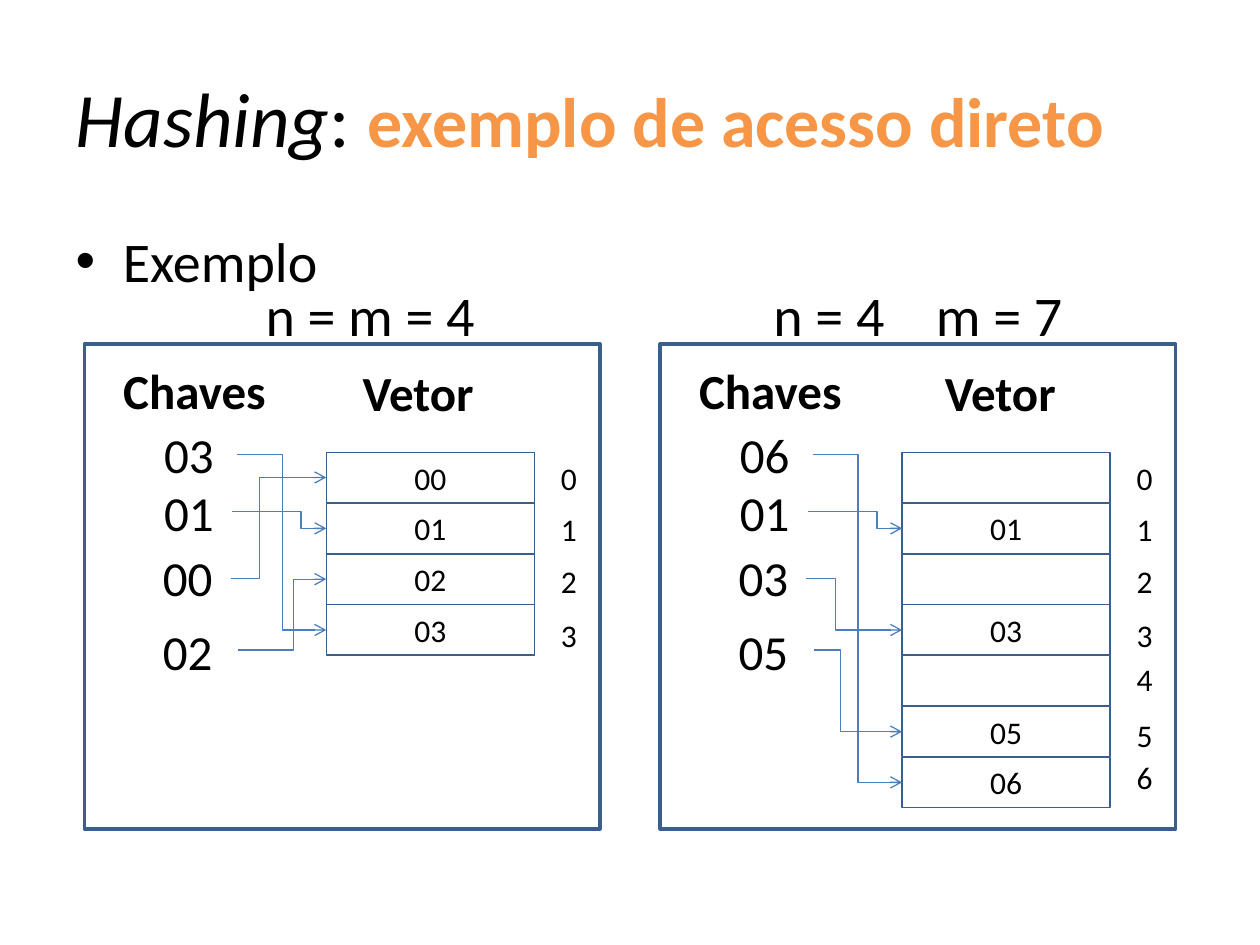
from dataclasses import dataclass

from lxml import etree
from pptx import Presentation
from pptx.dml.color import RGBColor
from pptx.enum.shapes import MSO_CONNECTOR, MSO_SHAPE
from pptx.enum.text import MSO_ANCHOR, PP_ALIGN
from pptx.oxml.ns import qn
from pptx.util import Inches, Pt

ELBOW = MSO_CONNECTOR.ELBOW
RECT = MSO_SHAPE.RECTANGLE
MIDDLE = MSO_ANCHOR.MIDDLE
LEFT, CENTER, JUSTIFY = PP_ALIGN.LEFT, PP_ALIGN.CENTER, PP_ALIGN.JUSTIFY

FONT = "Calibri"
BLACK, ORANGE, BORDER, ARROW = "000000", "F79646", "3A5F8C", "4B7EBC"

FRAME_TOP, FRAME_W, FRAME_H = 2.73, 4.09, 3.85
CELL_X, CELL_TOP, CELL_W, CELL_H = 1.92, 3.59, 1.65, 0.4
CELL_PITCH = (6.01 - CELL_TOP) / 6
INDEX_X, INDEX_TOPS = 3.59, (3.59, 4, 4.41, 4.84, 5.19, 5.63, 5.97)


@dataclass(frozen=True)
class KeySlot:
    """Place of one key and of the start of its arrow; x is from the frame."""
    center: float
    top: float
    arrow_x: float
    arrow_y: float


@dataclass(frozen=True)
class Panel:
    left: float
    caption: str
    caption_x: float
    vector_x: float
    keys: tuple[str, ...]
    bends: tuple[float, ...]
    size: int


SLOTS = (
    KeySlot(0.83, 3.32, 1.21, 3.61),
    KeySlot(0.83, 3.78, 1.17, 4.06),
    KeySlot(0.82, 4.3, 1.16, 4.59),
    KeySlot(0.82, 4.88, 1.22, 5.16),
)
PANELS = (
    Panel(0.67, "n = m = 4", 2.01, 2.78,
          ("03", "01", "00", "02"), (1.57, 1.72, 1.39, 1.66), 4),
    Panel(5.24, "n = 4\tm = 7", 6.04, 7.4,
          ("06", "01", "03", "05"), (1.57, 1.72, 1.39, 1.43), 7),
)


def rgb(color: str) -> RGBColor:
    return RGBColor.from_string(color)


def add_run(p, text: str, size: float, color: str = BLACK,
            bold: bool = False, italic: bool = False) -> None:
    r = p.add_run()
    r.text = text
    f = r.font
    f.name, f.size, f.bold, f.italic = FONT, Pt(size), bold, italic
    f.color.rgb = rgb(color)


def place(sp, x: float, y: float, w: float, h: float) -> None:
    sp.left, sp.top, sp.width, sp.height = map(Inches, (x, y, w, h))


def add_text(s, text: str, x: float, y: float, w: float, h: float,
             size: float, align=CENTER, bold: bool = False):
    tf = s.shapes.add_textbox(*map(Inches, (x, y, w, h))).text_frame
    tf.word_wrap = True
    p = tf.paragraphs[0]
    p.alignment = align
    add_run(p, text, size, bold=bold)
    return p


def add_tab_stop(p, pos: float) -> None:
    tabs = etree.SubElement(p._p.get_or_add_pPr(), qn("a:tabLst"))
    etree.SubElement(tabs, qn("a:tab"), pos=str(Inches(pos)), algn="l")


def add_box(s, x: float, y: float, w: float, h: float, line: float,
            text: str = "") -> None:
    sp = s.shapes.add_shape(RECT, *map(Inches, (x, y, w, h)))
    sp.shadow.inherit = False
    sp.fill.background()
    sp.line.color.rgb = rgb(BORDER)
    sp.line.width = Pt(line)
    if text:
        tf = sp.text_frame
        tf.vertical_anchor = MIDDLE
        tf.paragraphs[0].alignment = CENTER
        add_run(tf.paragraphs[0], text, 18)


def add_arrow(s, x1: float, y1: float, x2: float, y2: float,
              bend_x: float) -> None:
    """Elbow arrow whose upright part stands at bend_x."""
    c = s.shapes.add_connector(ELBOW, *map(Inches, (x1, y1, x2, y2)))
    c.line.color.rgb = rgb(ARROW)
    c.line.width = Pt(0.75)
    sp_pr = c._element.spPr
    etree.SubElement(sp_pr.find(qn("a:ln")), qn("a:tailEnd"), type="arrow")
    etree.SubElement(sp_pr, qn("a:effectLst"))
    adj = round((bend_x - x1) / (x2 - x1) * 100000)
    guides = sp_pr.find(qn("a:prstGeom")).find(qn("a:avLst"))
    etree.SubElement(guides, qn("a:gd"), name="adj1", fmla=f"val {adj}")


def draw_panel(s, panel: Panel) -> None:
    left = panel.left
    add_box(s, left, FRAME_TOP, FRAME_W, FRAME_H, 2)
    caption = add_text(s, panel.caption, panel.caption_x, 2.18, 2.6, 0.64,
                       32, LEFT)
    if "\t" in panel.caption:
        add_tab_stop(caption, 1.29)
    add_text(s, "Chaves", left + 0.21, 2.81, 1.34, 0.57, 28, LEFT, True)
    add_text(s, "Vetor", panel.vector_x, 2.83, 1.34, 0.57, 28, LEFT, True)

    for i in range(panel.size):
        key = f"{i:02}"
        add_box(s, left + CELL_X, CELL_TOP + i * CELL_PITCH, CELL_W, CELL_H,
                0.75, key if key in panel.keys else "")
        add_text(s, str(i), left + INDEX_X, INDEX_TOPS[i], 0.51, 0.4, 18)

    for key, slot, bend in zip(panel.keys, SLOTS, panel.bends):
        add_text(s, key, left + slot.center - 0.4, slot.top, 0.8, 0.57, 28)
        target_y = CELL_TOP + int(key) * CELL_PITCH + CELL_H / 2
        add_arrow(s, left + slot.arrow_x, slot.arrow_y,
                  left + CELL_X, target_y, left + bend)


def main() -> None:
    prs = Presentation()
    prs.slide_width, prs.slide_height = Inches(10), Inches(7.5)
    s = prs.slides.add_slide(prs.slide_layouts[1])
    title, body = s.placeholders

    place(title, 0.5, 0.3, 9, 1.25)
    title.text_frame.vertical_anchor = MIDDLE
    p = title.text_frame.paragraphs[0]
    p.alignment = LEFT
    add_run(p, "Hashing", 44, italic=True)
    add_run(p, ": ", 44)
    add_run(p, "exemplo de acesso direto", 40, ORANGE, bold=True)

    place(body, 0.5, 1.75, 9, 0.9)
    p = body.text_frame.paragraphs[0]
    p.alignment = JUSTIFY
    add_run(p, "Exemplo", 32)

    for panel in PANELS:
        draw_panel(s, panel)
    prs.save("out.pptx")


if __name__ == "__main__":
    main()
